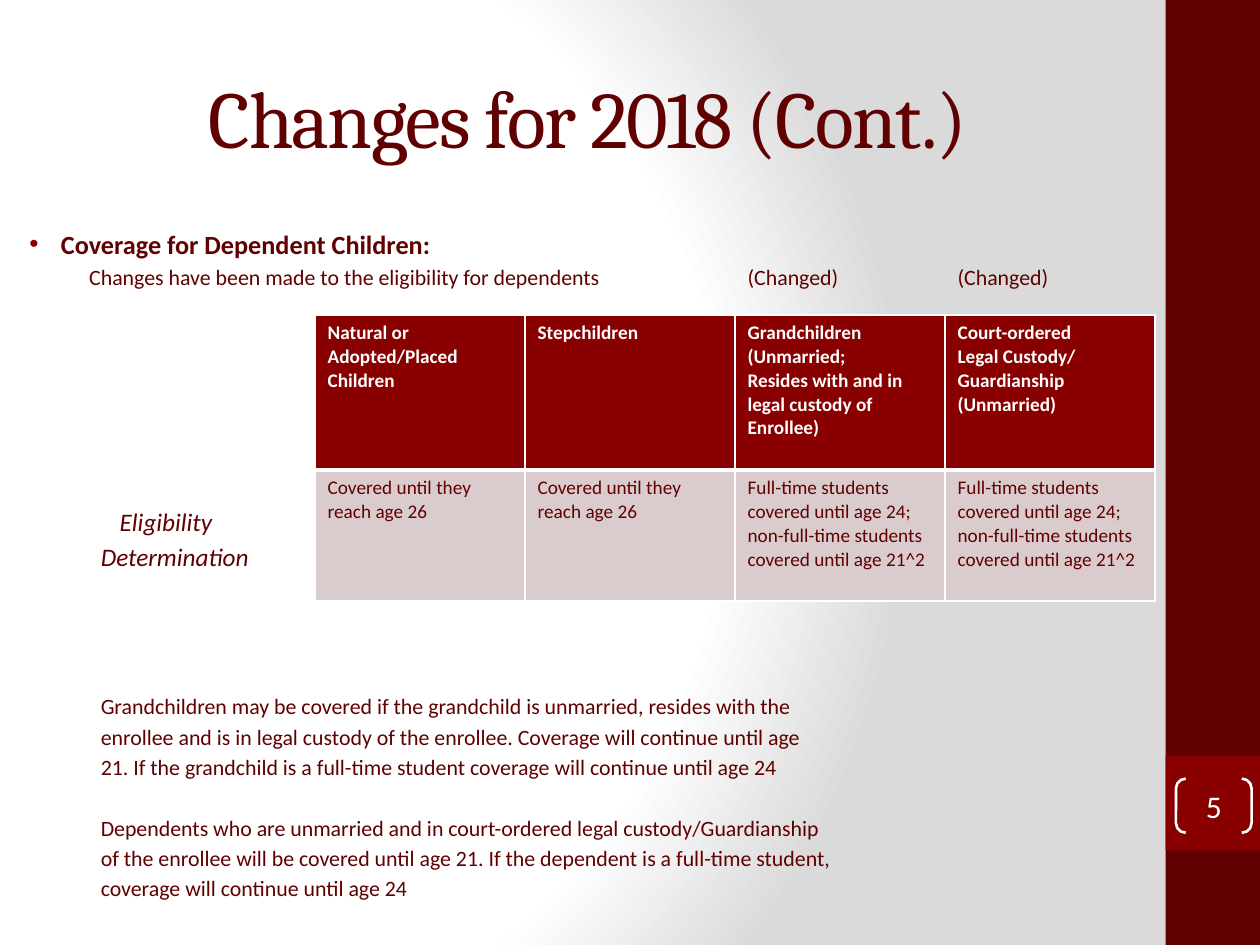
from lxml import etree
from pptx import Presentation, util as u
from pptx.dml.color import RGBColor
from pptx.enum import shapes, text
from pptx.oxml import parse_xml
from pptx.oxml.ns import nsdecls, qn

DARK, RED, PINK, WHITE = "600000", "890000", "DACCCC", "FFFFFF"

prs = Presentation()
prs.slide_width, prs.slide_height = u.Inches(10), u.Inches(7.5)
COL, ROW = prs.slide_width / 12, prs.slide_height / 30
s = prs.slides.add_slide(prs.slide_layouts[6])


def grid(col, row, cols, rows):
    """Turn a place on the 12 by 30 grid into left, top, width, height."""
    return [round(v) for v in (col * COL, row * ROW, cols * COL, rows * ROW)]


def write(tf, lines, size, color=DARK, font="Calibri", bold=False, italic=False,
          align=text.PP_ALIGN.LEFT, gap=0):
    """Fill a text frame with one paragraph per line, gap points apart."""
    tf.word_wrap = True
    for i, line in enumerate(lines):
        p = tf.add_paragraph() if i else tf.paragraphs[0]
        p.alignment = align
        if i:
            p.space_before = u.Pt(gap)
        r = p.add_run()
        r.text = line
        r.font.size, r.font.name = u.Pt(size), font
        r.font.bold, r.font.italic = bold, italic
        r.font.color.rgb = RGBColor.from_string(color)


# Background
fill = s.background.fill
fill.gradient()
grad = s.background._cSld.bg.bgPr.find(qn("a:gradFill"))
stops = "".join(f'<a:gs pos="{pos}"><a:srgbClr val="{c}"/></a:gs>'
                for pos, c in ((0, WHITE), (75000, WHITE), (100000, "DADADA")))
grad.getparent().replace(grad, parse_xml(
    f'<a:gradFill {nsdecls("a")} rotWithShape="1"><a:gsLst>{stops}</a:gsLst>'
    '<a:path path="circle"><a:fillToRect l="20000" t="50000" r="100000" b="50000"/>'
    '</a:path></a:gradFill>'))

# Side bar and its page number
for row, rows, color in ((0, 30, DARK), (24, 3, RED)):
    sp = s.shapes.add_shape(shapes.MSO_SHAPE.RECTANGLE, *grid(11.1, row, 0.9, rows))
    sp.shadow.inherit = False
    sp.fill.solid()
    sp.fill.fore_color.rgb = RGBColor.from_string(color)
    sp.line.fill.background()

sp = s.shapes.add_shape(shapes.MSO_SHAPE.DOUBLE_BRACKET, *grid(11.2, 24.72, 0.72, 1.72))
sp.shadow.inherit = False
sp.adjustments[0] = 0.18
sp.fill.background()
sp.line.color.rgb = RGBColor.from_string(WHITE)
sp.line.width = u.Pt(1.5)
tf = sp.text_frame
tf.margin_left = tf.margin_right = tf.margin_top = tf.margin_bottom = 0
tf.vertical_anchor = text.MSO_ANCHOR.MIDDLE
write(tf, ["5"], 18, WHITE, align=text.PP_ALIGN.CENTER)

# Title
tf = s.shapes.add_textbox(*grid(0.6, 1.2, 10, 5)).text_frame
tf.vertical_anchor = text.MSO_ANCHOR.MIDDLE
write(tf, ["Changes for 2018 (Cont.)"], 46, font="Cambria", align=text.PP_ALIGN.CENTER)
tf.paragraphs[0].runs[0].font._element.set("spc", "-100")

# Body text: place, lines, size and style
grandchildren = [
    "Grandchildren may be covered if the grandchild is unmarried, resides with the",
    "enrollee and is in legal custody of the enrollee. Coverage will continue until age",
    "21. If the grandchild is a full-time student coverage will continue until age 24"]
dependents = [
    "Dependents who are unmarried and in court-ordered legal custody/Guardianship",
    "of the enrollee will be covered until age 21. If the dependent is a full-time student,",
    "coverage will continue until age 24"]
body = [
    ((0.28, 7.24, 8, 1.1), ["Coverage for Dependent Children:"], 15, {"bold": True}),
    ((0.85, 8.37, 6, 1), ["Changes have been made to the eligibility for dependents"], 12.5, {}),
    ((7.12, 8.37, 1.8, 1), ["(Changed)"], 12.5, {}),
    ((9.12, 8.37, 1.8, 1), ["(Changed)"], 12.5, {}),
    ((0.96, 16.08, 2, 2.2), ["Eligibility", "Determination"], 14.4, {"italic": True, "gap": 2.4}),
    ((0.96, 22, 9, 6.7), grandchildren + dependents, 12.5, {"gap": 2.25}),
]
frames = []
for place, lines, size, style in body:
    tf = s.shapes.add_textbox(*grid(*place)).text_frame
    tf.margin_left = tf.margin_right = tf.margin_top = tf.margin_bottom = 0
    write(tf, lines, size, **style)
    frames.append(tf)

pPr = frames[0].paragraphs[0]._p.get_or_add_pPr()
pPr.set("marL", str(u.Inches(0.25)))
pPr.set("indent", str(-u.Inches(0.25)))
color = etree.SubElement(etree.SubElement(pPr, qn("a:buClr")), qn("a:srgbClr"))
color.set("val", RED)
etree.SubElement(pPr, qn("a:buFont")).set("typeface", "Arial")
etree.SubElement(pPr, qn("a:buChar")).set("char", "•")
frames[4].paragraphs[0]._p.get_or_add_pPr().set("marL", str(u.Inches(0.15)))
frames[5].paragraphs[len(grandchildren)].space_before = u.Pt(20)

# Eligibility table
until_26 = ["Covered until they reach age 26"]
until_24 = ["Full-time students", "covered until age 24;",
            "non-full-time students", "covered until age 21^2"]
rows = [
    [["Natural or Adopted/Placed Children"], ["Stepchildren"],
     ["Grandchildren", "(Unmarried;", "Resides with and in", "legal custody of", "Enrollee)"],
     ["Court-ordered", "Legal Custody/", "Guardianship", "(Unmarried)"]],
    [until_26, until_26, until_24, until_24],
]
table = s.shapes.add_table(2, 4, *grid(3, 10, 8, 9.08)).table
for i, (height, back, ink) in enumerate(((4.92, RED, WHITE), (4.16, PINK, DARK))):
    table.rows[i].height = round(height * ROW)
    for j, lines in enumerate(rows[i]):
        cell = table.cell(i, j)
        cell.fill.solid()
        cell.fill.fore_color.rgb = RGBColor.from_string(back)
        write(cell.text_frame, lines, 11, ink, bold=i == 0)
        heavy = "B" if i == 0 else "T"
        for k, side in enumerate("LRTB"):
            width = u.Pt(3 if side == heavy else 1)
            cell._tc.tcPr.insert(k, parse_xml(
                f'<a:ln{side} {nsdecls("a")} w="{width}"><a:solidFill>'
                f'<a:srgbClr val="{WHITE}"/></a:solidFill></a:ln{side}>'))

prs.save("out.pptx")
